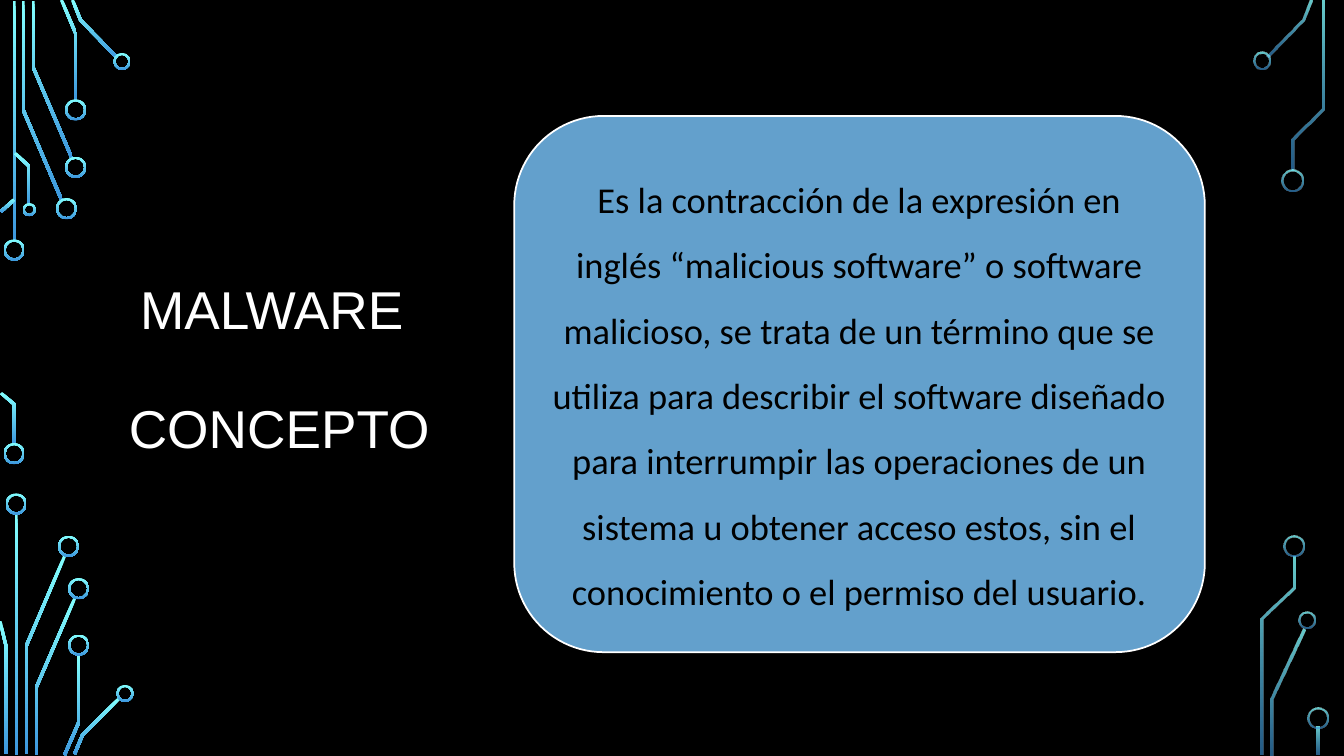
"""Build the slide that defines malware, framed by circuit traces."""
import math

from lxml import etree
from pptx import Presentation
from pptx.dml.color import RGBColor
from pptx.enum.shapes import MSO_SHAPE
from pptx.enum.text import MSO_ANCHOR, MSO_AUTO_SIZE, PP_ALIGN
from pptx.oxml.ns import qn
from pptx.util import Emu, Pt

DONUT = MSO_SHAPE.DONUT
ROUNDED = MSO_SHAPE.ROUNDED_RECTANGLE
MIDDLE = MSO_ANCHOR.MIDDLE
NO_AUTOFIT = MSO_AUTO_SIZE.NONE
CENTER = PP_ALIGN.CENTER

BLACK = RGBColor(0x00, 0x00, 0x00)
WHITE = RGBColor(0xFF, 0xFF, 0xFF)
CYAN = RGBColor(0x82, 0xFF, 0xFF)
BLUE = RGBColor(0x3D, 0x97, 0xDE)
PANEL_BLUE = RGBColor(0x63, 0xA0, 0xCC)

EMU_PER_PX = 9144
TRACE_WIDTH = 3
RING_WIDTH = 2
TITLE_INDENT = 15
OPAQUE = (100, 100)
FADED = (80, 60)

LEFT_TRACES = [
    [(14, 1), (14, 240)],
    [(23, 1), (23, 109), (61, 198)],
    [(33, 1), (33, 67), (71, 156)],
    [(61, 0), (75, 33), (75, 100)],
    [(72, 0), (80, 20), (116, 57)],
    [(1, 210), (14, 198)],
    [(1, 390), (14, 401), (14, 441)],
    [(15, 152), (29, 165), (29, 203)],
    [(16, 510), (16, 749)],
    [(64, 552), (26, 641), (26, 748)],
    [(0, 616), (6, 641), (6, 748)],
    [(74, 594), (36, 682), (36, 749)],
    [(78, 650), (78, 717), (64, 749)],
    [(118, 693), (82, 729), (74, 748)],
]
RIGHT_TRACES = [
    [(1300, 0), (1292, 20), (1257, 56)],
    [(1293, 624), (1262, 693), (1262, 749)],
    [(1312, 1), (1312, 108), (1282, 138), (1282, 169)],
    [(1283, 552), (1283, 583), (1252, 614), (1252, 749)],
    [(1307, 721), (1307, 749)],
]
LEFT_NODES = [
    (14, 248, 21), (14, 450, 21), (66, 207, 21), (75, 166, 21),
    (75, 109, 21), (121, 61, 17), (29, 208, 13), (16, 500, 21),
    (68, 542, 21), (78, 584, 21), (78, 640, 21), (124, 688, 17),
]
RIGHT_NODES = [
    (1252, 60, 17), (1282, 179, 21), (1296, 615, 17),
    (1283, 542, 21), (1307, 712, 21),
]
DEFINITION = (
    "Es la contracción de la expresión en inglés “malicious software” o "
    "software malicioso, se trata de un término que se utiliza para describir "
    "el software diseñado para interrumpir las operaciones de un sistema u "
    "obtener acceso estos, sin el conocimiento o el permiso del usuario."
)


def px(length):
    """Turn a length in px into EMU."""
    return Emu(round(length * EMU_PER_PX))


def paint_glow(shape, opacities):
    """Fill a shape from cyan down to blue with the given opacities."""
    shape.shadow.inherit = False
    shape.line.fill.background()
    shape.fill.gradient()
    shape.fill.gradient_angle = 270
    for stop, color in zip(shape.fill.gradient_stops, (CYAN, BLUE)):
        stop.color.rgb = color
    colors = shape._element.spPr.iter(qn("a:srgbClr"))
    for color, opacity in zip(list(colors), opacities):
        if opacity < 100:
            etree.SubElement(color, qn("a:alpha")).set("val", str(opacity * 1000))


def ribbon(points, width):
    """Return the outline of a mitred band that follows the points."""
    normals = []
    for (x1, y1), (x2, y2) in zip(points, points[1:]):
        length = math.hypot(x2 - x1, y2 - y1)
        normals.append(((y1 - y2) / length, (x2 - x1) / length))
    near, far = [], []
    joints = zip(points, normals[:1] + normals, normals + normals[-1:])
    for (x, y), (ax, ay), (bx, by) in joints:
        reach = width / 2 / (1 + ax * bx + ay * by)
        dx, dy = (ax + bx) * reach, (ay + by) * reach
        near.append((px(x + dx), px(y + dy)))
        far.append((px(x - dx), px(y - dy)))
    return near + far[::-1]


def add_trace(slide, points, opacities):
    """Add one circuit trace."""
    outline = ribbon(points, TRACE_WIDTH)
    builder = slide.shapes.build_freeform(*outline[0])
    builder.add_line_segments(outline[1:], close=True)
    paint_glow(builder.convert_to_shape(), opacities)


def add_node(slide, center_x, center_y, size, opacities):
    """Add one ring at the end of a trace."""
    left, top = px(center_x - size / 2), px(center_y - size / 2)
    shape = slide.shapes.add_shape(DONUT, left, top, px(size), px(size))
    shape.adjustments[0] = RING_WIDTH / size
    paint_glow(shape, opacities)


def write_text(paragraph, text, *, font, size, color, spacing, before=0, indent=0):
    """Write centred text into a paragraph."""
    if indent:
        paragraph._p.get_or_add_pPr().set("marL", str(px(indent)))
    paragraph.alignment = CENTER
    paragraph.line_spacing = spacing
    paragraph.space_before = Pt(before)
    run = paragraph.add_run()
    run.text = text
    run.font.name = font
    run.font.size = Pt(size)
    run.font.color.rgb = color


def format_title(slide):
    """Place the title and write its two lines."""
    title = slide.shapes.title
    title.left, title.top, title.width, title.height = map(px, (29, 68, 481, 602))
    frame = title.text_frame
    frame.vertical_anchor = MIDDLE
    frame.auto_size = NO_AUTOFIT
    style = {"font": "Arial", "size": 38, "color": WHITE, "spacing": 0.9}
    write_text(frame.paragraphs[0], "MALWARE", **style)
    write_text(frame.add_paragraph(), "CONCEPTO", before=43.5,
               indent=TITLE_INDENT, **style)


def add_panel(slide, text):
    """Add the rounded panel with the definition."""
    panel = slide.shapes.add_shape(ROUNDED, px(510), px(115), px(685), px(532))
    panel.shadow.inherit = False
    panel.fill.solid()
    panel.fill.fore_color.rgb = PANEL_BLUE
    panel.line.color.rgb = WHITE
    panel.line.width = Pt(1.25)
    frame = panel.text_frame
    frame.word_wrap = True
    frame.vertical_anchor = MIDDLE
    frame.margin_left = frame.margin_right = px(11)
    frame.margin_top = frame.margin_bottom = px(11)
    write_text(frame.paragraphs[0], text, font="Calibri", size=26,
               color=BLACK, spacing=1.5)


def main():
    """Build and save the presentation."""
    presentation = Presentation()
    presentation.slide_width, presentation.slide_height = px(1333), px(750)
    slide = presentation.slides.add_slide(presentation.slide_layouts[5])
    slide.background.fill.solid()
    slide.background.fill.fore_color.rgb = BLACK
    for traces, nodes, opacities in (
        (LEFT_TRACES, LEFT_NODES, OPAQUE),
        (RIGHT_TRACES, RIGHT_NODES, FADED),
    ):
        for points in traces:
            add_trace(slide, points, opacities)
        for node in nodes:
            add_node(slide, *node, opacities)
    format_title(slide)
    add_panel(slide, DEFINITION)
    presentation.save("out.pptx")


if __name__ == "__main__":
    main()
